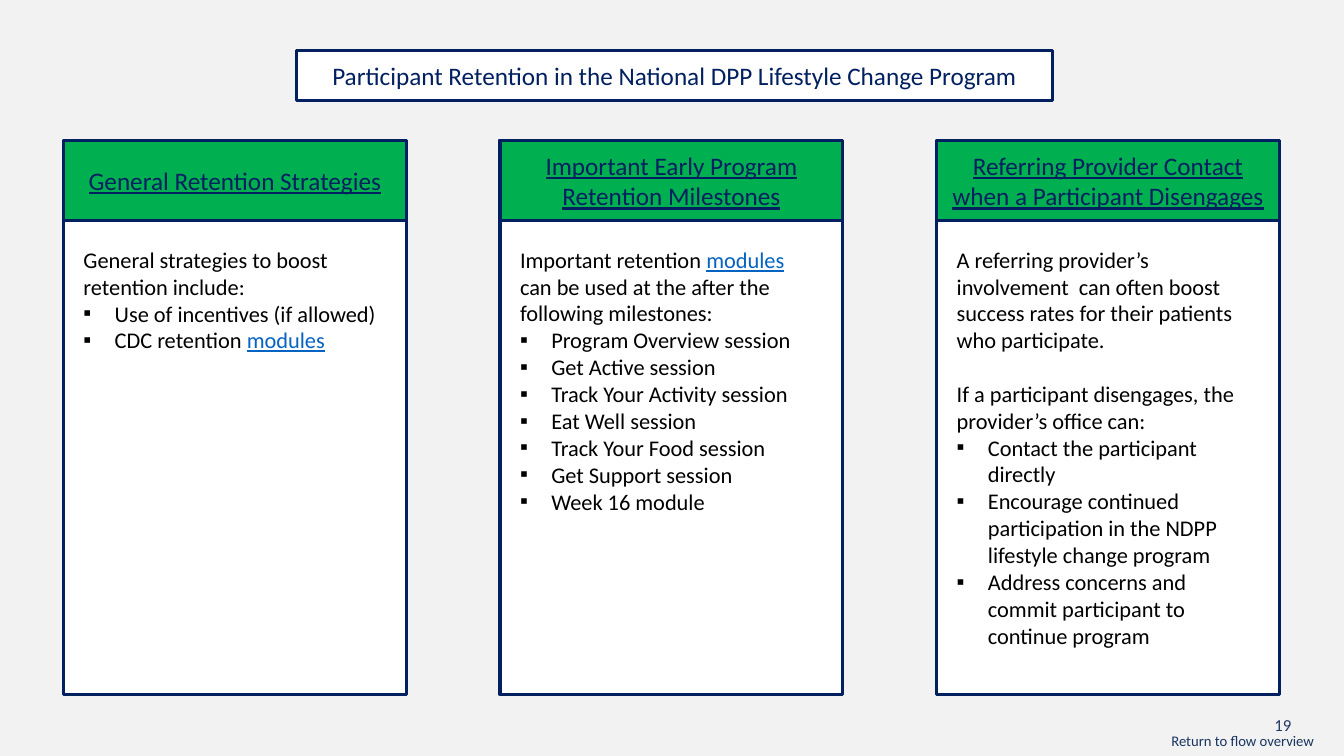
from lxml.etree import SubElement
from pptx import Presentation
from pptx.dml.color import RGBColor
from pptx.enum.shapes import MSO_SHAPE
from pptx.enum.text import MSO_ANCHOR, PP_ALIGN
from pptx.oxml.ns import qn
from pptx.util import Pt

EMU_PER_PX = 9144
FONT = "Calibri"
NAVY = RGBColor(0x00, 0x20, 0x60)
GREEN = RGBColor(0x00, 0xB0, 0x50)
WHITE = RGBColor(0xFF, 0xFF, 0xFF)
BLACK = RGBColor(0x00, 0x00, 0x00)
LINK_BLUE = RGBColor(0x05, 0x63, 0xC1)
NUMBER_BLUE = RGBColor(0x20, 0x38, 0x64)
FOOTER_BLUE = RGBColor(0x19, 0x35, 0x60)
PAGE_GREY = RGBColor(0xF2, 0xF2, 0xF2)

COLUMN_LEFT, COLUMN_TOP, COLUMN_PITCH = 63, 139, 433
COLUMN_WIDTH, COLUMN_HEIGHT, HEADER_HEIGHT = 340, 550, 80
BODY_INSET, BODY_TOP, BODY_WIDTH = 10, 239, 320
BULLET_INDENT = 31
LINK = "modules"

COLUMNS = [
    {
        "header": "General Retention Strategies",
        "intro": [["General strategies to boost retention include:"]],
        "bullets": [["Use of incentives (if allowed)"], ["CDC retention ", LINK]],
        "height": 145,
    },
    {
        "header": "Important Early Program Retention Milestones",
        "intro": [
            ["Important retention ", LINK],
            ["can be used at the after the following milestones:"],
        ],
        "bullets": [
            ["Program Overview session"],
            ["Get Active session"],
            ["Track Your Activity session"],
            ["Eat Well session"],
            ["Track Your Food session"],
            ["Get Support session"],
            ["Week 16 module"],
        ],
        "height": 306,
    },
    {
        "header": "Referring Provider Contact when a Participant Disengages",
        "intro": [
            ["A referring provider’s involvement  can often boost success rates "
             "for their patients who participate."],
            ["If a participant disengages, the provider’s office can:"],
        ],
        "intro_gap": 19,
        "bullets": [
            ["Contact the participant directly"],
            ["Encourage continued participation in the NDPP lifestyle change program"],
            ["Address concerns and commit participant to continue program"],
        ],
        "height": 414,
    },
]


def px(*lengths):
    return [length * EMU_PER_PX for length in lengths]


def add_span(para, text, size, color, underline=False):
    span = para.add_run()
    span.text = text
    span.font.name = FONT
    span.font.size = Pt(size)
    span.font.color.rgb = color
    span.font.underline = underline


def add_panel(page, left, top, width, height, fill):
    panel = page.shapes.add_shape(MSO_SHAPE.RECTANGLE, *px(left, top, width, height))
    panel.shadow.inherit = False
    panel.fill.solid()
    panel.fill.fore_color.rgb = fill
    panel.line.color.rgb = NAVY
    panel.line.width = Pt(2.25)
    return panel


def add_heading(page, left, top, width, height, fill, text, underline=False):
    frame = add_panel(page, left, top, width, height, fill).text_frame
    frame.word_wrap = True
    frame.vertical_anchor = MSO_ANCHOR.MIDDLE
    para = frame.paragraphs[0]
    para.alignment = PP_ALIGN.CENTER
    add_span(para, text, 18, NAVY, underline)


def add_label(page, left, top, width, height, text, size, color):
    box = page.shapes.add_textbox(*px(left, top, width, height))
    box.text_frame.word_wrap = False
    add_span(box.text_frame.paragraphs[0], text, size, color)


def add_bullet(para):
    properties = para._p.get_or_add_pPr()
    [indent] = px(BULLET_INDENT)
    properties.set("marL", str(indent))
    properties.set("indent", str(-indent))
    SubElement(properties, qn("a:buFont"), typeface="Arial")
    SubElement(properties, qn("a:buChar"), char="▪")


def add_body(page, left, column):
    box = page.shapes.add_textbox(*px(left, BODY_TOP, BODY_WIDTH, column["height"]))
    frame = box.text_frame
    frame.word_wrap = True
    intro = column["intro"]
    for index, texts in enumerate(intro + column["bullets"]):
        para = frame.add_paragraph() if index else frame.paragraphs[0]
        if index >= len(intro):
            add_bullet(para)
        elif index and "intro_gap" in column:
            para.space_before = Pt(column["intro_gap"])
        for text in texts:
            linked = text == LINK
            add_span(para, text, 16, LINK_BLUE if linked else BLACK, linked)


def add_column(page, index, column):
    left = COLUMN_LEFT + index * COLUMN_PITCH
    add_panel(page, left, COLUMN_TOP, COLUMN_WIDTH, COLUMN_HEIGHT, WHITE)
    add_heading(page, left, COLUMN_TOP, COLUMN_WIDTH, HEADER_HEIGHT, GREEN,
                column["header"], underline=True)
    add_body(page, left + BODY_INSET, column)


def main():
    deck = Presentation()
    deck.slide_width, deck.slide_height = px(1333, 750)
    page = deck.slides.add_slide(deck.slide_layouts[6])
    page.background.fill.solid()
    page.background.fill.fore_color.rgb = PAGE_GREY

    add_label(page, 1254, 704, 40, 30, "19", 12, NUMBER_BLUE)
    add_label(page, 1152, 721, 164, 28, "Return to flow overview", 10.5, FOOTER_BLUE)
    add_heading(page, 294, 50, 750, 50, WHITE,
                "Participant Retention in the National DPP Lifestyle Change Program")
    for index, column in enumerate(COLUMNS):
        add_column(page, index, column)

    deck.save("out.pptx")


if __name__ == "__main__":
    main()
